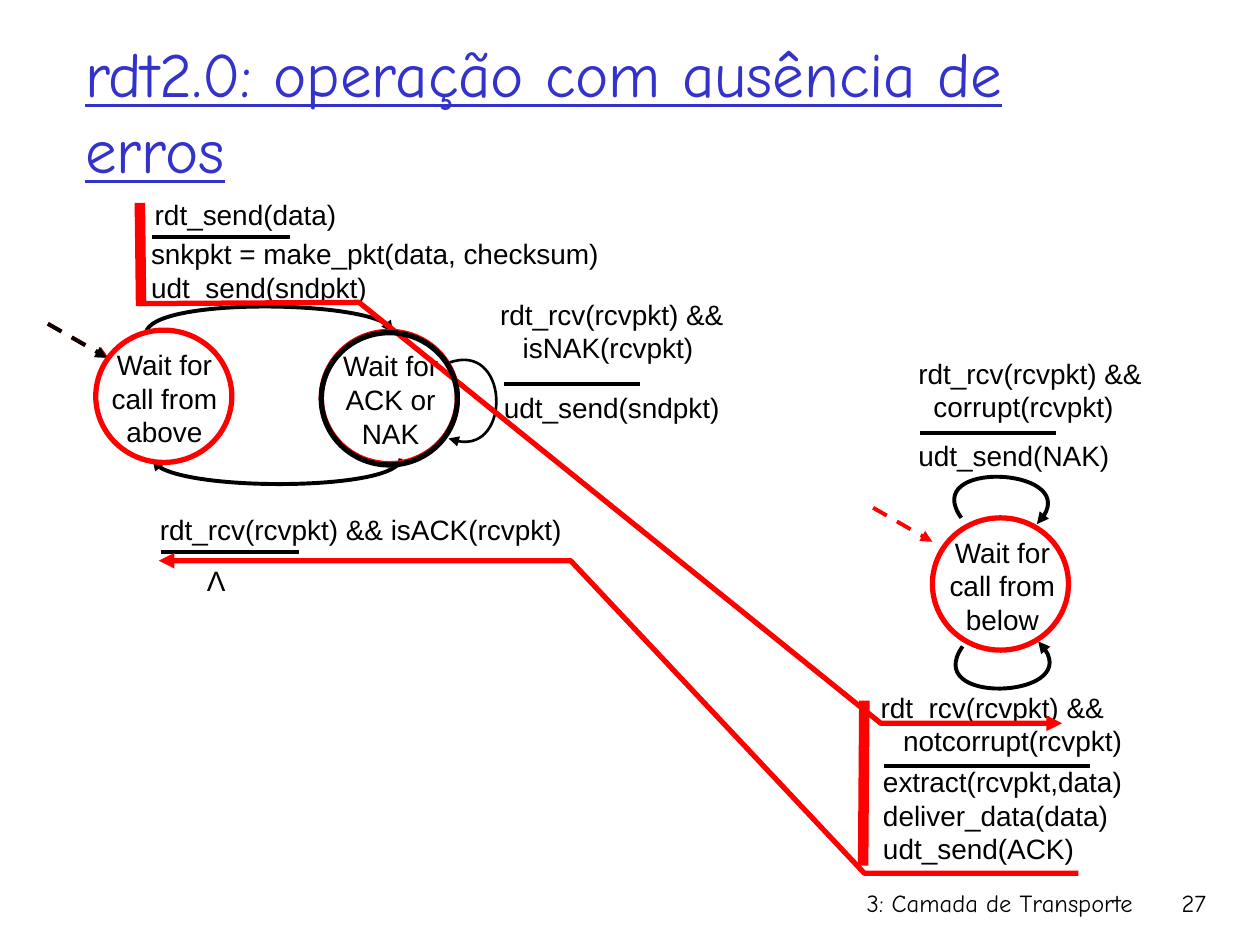
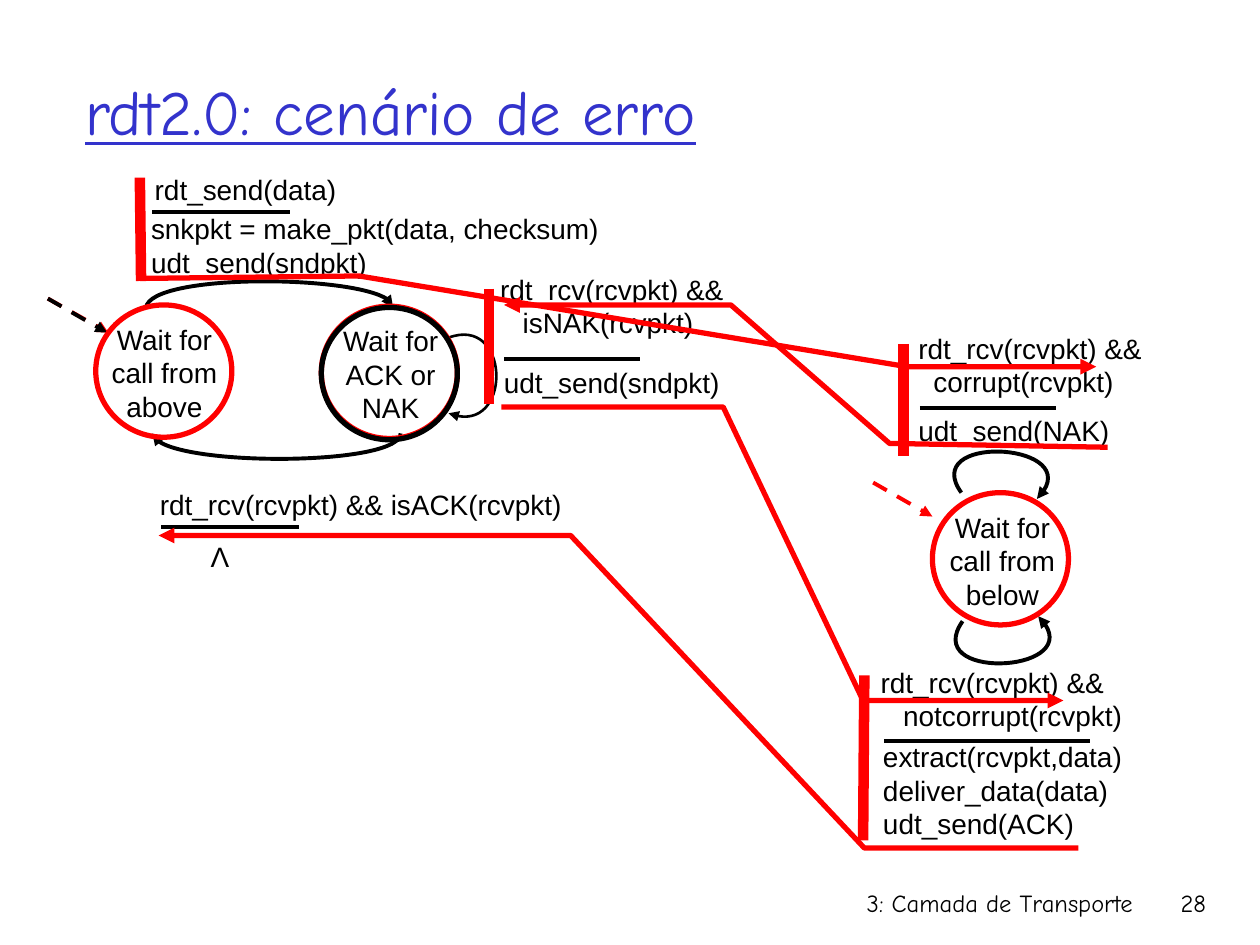
import dataclasses

import pptx
import pptx.dml.color
import pptx.enum.dml
import pptx.enum.shapes
import pptx.enum.text
import pptx.oxml
import pptx.oxml.ns
import pptx.util

Inches = pptx.util.Inches
Align = pptx.enum.text.PP_ALIGN


@dataclasses.dataclass(frozen=True)
class Theme:
    title_color: str = "3333CC"
    ink: str = "000000"
    highlight: str = "FF0000"
    paper: str = "FFFFFF"
    title_font: str = "Comic Neue"
    body_font: str = "Arial"
    title_size: int = 36
    body_size: int = 16
    footer_size: int = 14
    thin: float = 1.5
    normal: float = 2.25
    thick: float = 3
    bar: float = 6


THEME = Theme()

TITLE_BOX = (0.58, 0.25, 8.5, 1.25)
FOOTER = "3: Camada de Transporte"
FOOTER_BOX = (5.92, 7, 3.17, 0.5)
NUMBER_BOX = (8.93, 7, 0.74, 0.5)

# The state machines stand lower under a two-line title; SLIDES gives the lift.
STATE_SIZE = (1.08, 1.05)
SENDER, WAITING, RECEIVER = (0.76, 2.62), (2.55, 2.63), (7.4, 4.11)
STATE_LABELS = [
    ("Wait for call from above", (0.65, 2.71, 1.31, 0.67)),
    ("Wait for ACK or NAK", (2.51, 2.72, 1.18, 0.67)),
    ("Wait for call from below", (7.3, 4.2, 1.31, 0.67)),
]

# Lines of a label, its box, and the indent of the lines after the first
TRANSITION_LABELS = [
    (["rdt_send(data)"], (1.13, 1.52, 2.47, 0.47), 0),
    (["snkpkt = make_pkt(data, checksum)", "udt_send(sndpkt)"], (1.1, 1.83, 3.98, 0.44), 0),
    (["rdt_rcv(rcvpkt) && isACK(rcvpkt)"], (1.17, 4.02, 3.88, 0.31), 0),
    (["rdt_rcv(rcvpkt) &&", "isNAK(rcvpkt)"], (3.87, 2.31, 2.28, 0.69), 0.18),
    (["udt_send(sndpkt)"], (3.9, 3.05, 1.93, 0.44), 0),
    (["rdt_rcv(rcvpkt) &&", "corrupt(rcvpkt)"], (7.19, 2.78, 2.1, 0.34), 0.12),
    (["udt_send(NAK)"], (7.19, 3.43, 2, 0.28), 0),
    (["rdt_rcv(rcvpkt) &&", "notcorrupt(rcvpkt)"], (6.89, 5.43, 2.36, 0.77), 0.18),
    (["extract(rcvpkt,data)", "deliver_data(data)", "udt_send(ACK)"], (6.91, 6.02, 2.34, 0.68), 0),
]

# Left, right and height of the rule between an event and its actions
EVENT_RULES = [
    (1.21, 2.3, 1.88), (1.28, 2.37, 4.38), (4, 5.08, 3.05),
    (7.3, 8.38, 3.44), (7.02, 8.65, 6.08),
]

# Start, two control points and end; the arrowhead is at the end
TRANSITION_ARCS = [
    ([(1.16, 2.64), (1.2, 2.37), (3.12, 2.38), (3.12, 2.64)], THEME.normal),
    ([(3.18, 3.64), (3.18, 3.89), (1.25, 3.91), (1.21, 3.64)], THEME.normal),
    ([(3.56, 2.88), (4.04, 2.7), (4.07, 3.68), (3.56, 3.48)], THEME.thin),
    ([(7.63, 4.11), (7.3, 3.65), (8.67, 3.71), (8.23, 4.16)], THEME.normal),
    ([(7.64, 5.13), (7.31, 5.6), (8.69, 5.54), (8.24, 5.09)], THEME.normal),
]

START_ARROWS = [
    ((0.38, 2.57), (0.86, 2.84), THEME.highlight),
    ((6.93, 4.03), (7.4, 4.3), THEME.highlight),
    ((0.38, 2.57), (0.85, 2.84), THEME.ink),
]

ACTIVE_BARS = [((1.11, 1.61), (1.12, 2.43)), ((6.86, 5.56), (6.85, 6.87))]
ACK_ROUTE = [(8.56, 6.93), (6.86, 6.93), (4.53, 4.45), (1.26, 4.45)]

# Bars and routes of a single slide are given where they stand, without lift.
SLIDES = [
    {
        "title": "rdt2.0: operação com ausência de erros",
        "number": "27",
        "lift": 0,
        "bars": [],
        "routes": [[(1.11, 2.41), (2.85, 2.4), (6.99, 5.74), (8.43, 5.74)]],
        "lambda": (1.54, 4.42, 0.35, 0.37),
    },
    {
        "title": "rdt2.0: cenário de erro",
        "number": "28",
        "lift": 0.2,
        "bars": [((7.17, 2.73), (7.17, 3.62)), ((3.88, 2.29), (3.88, 3.21))],
        "routes": [
            [(1.11, 2.21), (2.85, 2.19), (7.2, 2.91), (8.7, 2.91)],
            [(8.79, 3.55), (7.06, 3.52), (5.8, 2.42), (4, 2.42)],
            [(3.98, 3.23), (5.74, 3.23), (6.85, 5.56), (8.44, 5.56)],
        ],
        "lambda": (1.57, 4.23, 0.35, 0.37),
    },
]


def rgb(color):
    return pptx.dml.color.RGBColor.from_string(color)


def raised(place, lift):
    """Move a point or a box up by lift."""
    left, top, *size = place
    return (left, top - lift, *size)


def add_text(slide, lines, box, size=THEME.body_size, font=THEME.body_font,
             color=THEME.ink, align=Align.LEFT, indent=0, wrap=True):
    shape = slide.shapes.add_textbox(*map(Inches, box))
    frame = shape.text_frame
    frame.word_wrap = wrap
    for index, line in enumerate(lines):
        paragraph = frame.add_paragraph() if index else frame.paragraphs[0]
        paragraph.alignment = align
        if index and indent:
            paragraph._p.get_or_add_pPr().set("marL", str(Inches(indent)))
        run = paragraph.add_run()
        run.text = line
        run.font.name = font
        run.font.size = pptx.util.Pt(size)
        run.font.color.rgb = rgb(color)
    return shape


def style_line(shape, color, width, arrow=False, dashed=False):
    shape.line.color.rgb = rgb(color)
    shape.line.width = pptx.util.Pt(width)
    if dashed:
        shape.line.dash_style = pptx.enum.dml.MSO_LINE.DASH
    if arrow:
        outline = shape._element.spPr.find(pptx.oxml.ns.qn("a:ln"))
        outline.append(pptx.oxml.parse_xml(
            f'<a:tailEnd {pptx.oxml.ns.nsdecls("a")} type="triangle"/>'))


def add_line(slide, start, end, color, width, **style):
    connector = slide.shapes.add_connector(
        pptx.enum.shapes.MSO_CONNECTOR.STRAIGHT, *map(Inches, (*start, *end)))
    style_line(connector, color, width, **style)
    connector._element.spPr.append(pptx.oxml.parse_xml(
        f'<a:effectLst {pptx.oxml.ns.nsdecls("a")}/>'))


def add_route(slide, points, color, width, curved=False):
    """Draw an open arrow through the points, or one cubic curve controlled by them."""
    start, *others = [tuple(map(Inches, point)) for point in points]
    builder = slide.shapes.build_freeform(*start)
    builder.add_line_segments(others, close=False)
    shape = builder.convert_to_shape()
    shape.shadow.inherit = False
    shape.fill.background()
    style_line(shape, color, width, arrow=True)
    if curved:
        segments = shape._element.xpath(".//a:lnTo")
        curve = pptx.oxml.parse_xml(f'<a:cubicBezTo {pptx.oxml.ns.nsdecls("a")}/>')
        segments[0].addprevious(curve)
        for segment in segments:
            curve.append(segment[0])
            segment.getparent().remove(segment)


def add_state(slide, corner, color, width, filled=False):
    shape = slide.shapes.add_shape(
        pptx.enum.shapes.MSO_SHAPE.OVAL, *map(Inches, (*corner, *STATE_SIZE)))
    shape.shadow.inherit = False
    if filled:
        shape.fill.solid()
        shape.fill.fore_color.rgb = rgb(THEME.paper)
    else:
        shape.fill.background()
    style_line(shape, color, width)


def add_frame(slide, title, number):
    """Add the title, footer and slide number."""
    shape = add_text(slide, [title], TITLE_BOX, THEME.title_size,
                     THEME.title_font, THEME.title_color)
    shape.text_frame.vertical_anchor = pptx.enum.text.MSO_ANCHOR.MIDDLE
    shape.text_frame.paragraphs[0].runs[0].font.underline = True
    for text, box in ((FOOTER, FOOTER_BOX), (number, NUMBER_BOX)):
        add_text(slide, [text], box, THEME.footer_size, THEME.title_font, align=Align.RIGHT)


def add_state_machines(slide, lift):
    for corner in (SENDER, WAITING, RECEIVER):
        add_state(slide, raised(corner, lift), THEME.ink, THEME.thin, filled=True)
    for points, width in TRANSITION_ARCS:
        add_route(slide, [raised(point, lift) for point in points], THEME.ink, width, curved=True)
    for text, box in STATE_LABELS:
        add_text(slide, [text], raised(box, lift), align=Align.CENTER)
    for lines, box, indent in TRANSITION_LABELS:
        add_text(slide, lines, raised(box, lift), indent=indent)
    for left, right, height in EVENT_RULES:
        add_line(slide, (left, height - lift), (right, height - lift), THEME.ink, THEME.normal)
    for start, end, color in START_ARROWS:
        add_line(slide, raised(start, lift), raised(end, lift), color, THEME.normal,
                 arrow=True, dashed=True)


def add_trace(slide, content):
    """Mark the transitions taken, the packets sent and the states visited."""
    lift = content["lift"]
    bars = [(raised(start, lift), raised(end, lift)) for start, end in ACTIVE_BARS]
    for start, end in bars + content["bars"]:
        add_line(slide, start, end, THEME.highlight, THEME.bar)
    ack_route = [raised(point, lift) for point in ACK_ROUTE]
    for points in [ack_route] + content["routes"]:
        add_route(slide, points, THEME.highlight, THEME.thick)
    for corner in (SENDER, WAITING, RECEIVER):
        add_state(slide, raised(corner, lift), THEME.highlight, THEME.thick)
    add_state(slide, raised(WAITING, lift - 0.01), THEME.ink, THEME.thick)
    add_text(slide, ["Λ"], content["lambda"], align=Align.CENTER, wrap=False)


def main():
    presentation = pptx.Presentation()
    presentation.slide_width, presentation.slide_height = Inches(10), Inches(7.5)
    for content in SLIDES:
        slide = presentation.slides.add_slide(presentation.slide_layouts[6])
        add_frame(slide, content["title"], content["number"])
        add_state_machines(slide, content["lift"])
        add_trace(slide, content)
    presentation.save("out.pptx")


if __name__ == "__main__":
    main()
